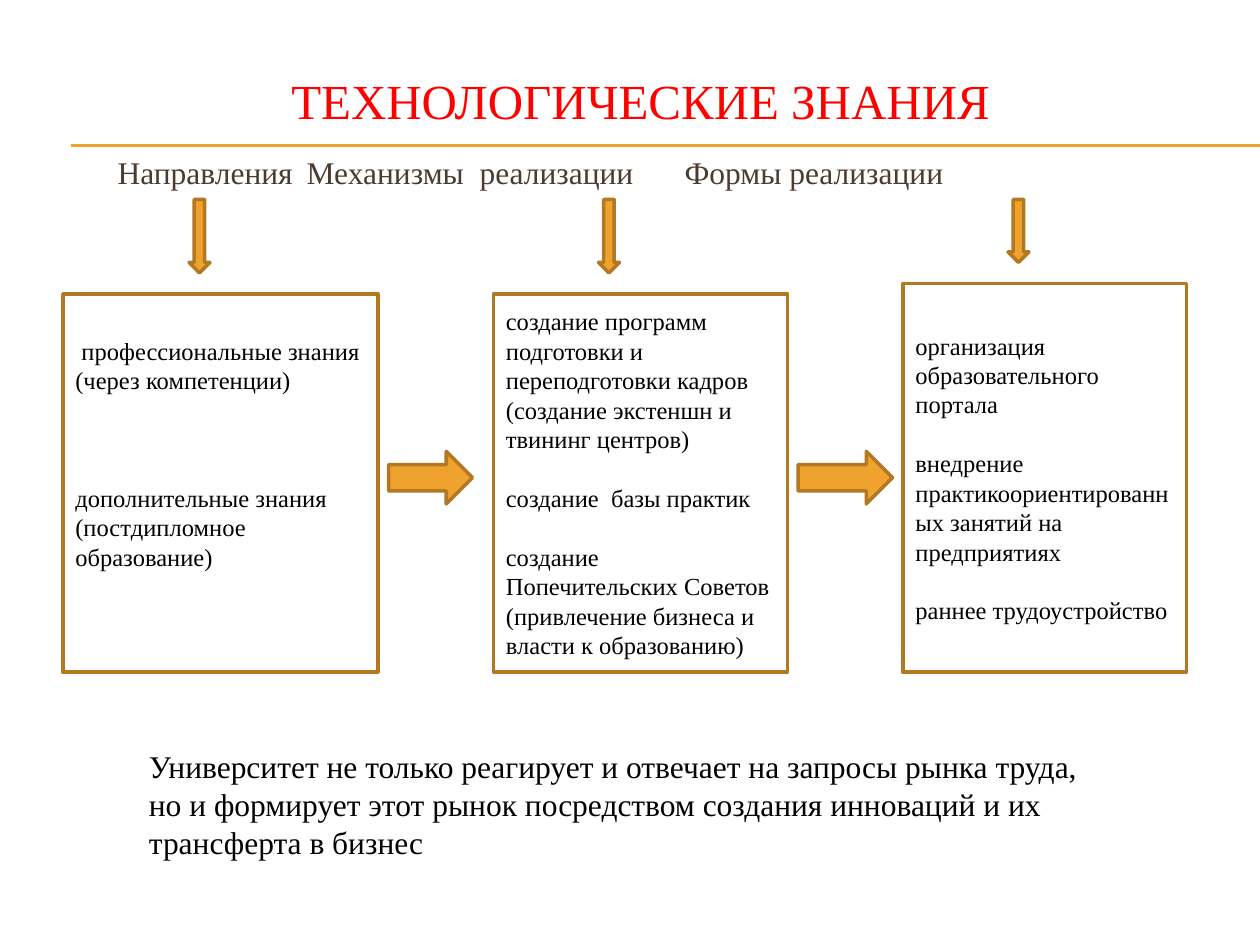
from lxml import etree
from pptx import Presentation
from pptx.dml.color import RGBColor
from pptx.enum.shapes import MSO_CONNECTOR, MSO_SHAPE
from pptx.enum.text import MSO_ANCHOR, MSO_AUTO_SIZE, PP_ALIGN
from pptx.oxml.ns import qn
from pptx.util import Pt

RECT, DOWN, RIGHT = MSO_SHAPE.RECTANGLE, MSO_SHAPE.DOWN_ARROW, MSO_SHAPE.RIGHT_ARROW
LINE = MSO_CONNECTOR.STRAIGHT
MID, TOP = MSO_ANCHOR.MIDDLE, MSO_ANCHOR.TOP
LEFT, CENTER = PP_ALIGN.LEFT, PP_ALIGN.CENTER
NO_FIT, GROW = MSO_AUTO_SIZE.NONE, MSO_AUTO_SIZE.SHAPE_TO_FIT_TEXT

FONT = "Times New Roman"
GOLD, EDGE, RED, BROWN, BLACK = "F0A22E", "B27822", "FF0000", "4E3B30", "000000"
ROW = 16.8  # height of one 14 pt line

# Content
TITLE = "ТЕХНОЛОГИЧЕСКИЕ ЗНАНИЯ"
HEADS = [("Направления", 45), ("Механизмы  реализации", 189),
         ("Формы реализации", 445.5)]  # text, tab stop
# Each box: left, top, width, arrow offset, arrow height, rows left free below,
# paragraphs as (rows left free above, text)
BOXES = [
    (36, 168, 180, 72, 42, 2, [
        (0, " профессиональные знания"),
        (0, "(через компетенции)"),
        (3, "дополнительные знания (постдипломное образование)")]),
    (282, 168, 168, 60, 42, 0, [
        (0, "создание программ подготовки и переподготовки кадров"),
        (0, "(создание экстеншн и твининг центров)"),
        (1, "создание  базы практик"),
        (1, "создание"),
        (0, "Попечительских Советов"),
        (0, "(привлечение бизнеса и власти к образованию)")]),
    (516, 162, 162, 60, 36, 0, [
        (0, "организация образовательного портала"),
        (1, "внедрение практикоориентированных занятий на предприятиях"),
        (1, "раннее трудоустройство")]),
]
BASE = 384  # shared bottom of the boxes
STEPS = [(222, 48), (456, 54)]  # left, width of the arrows between boxes
NOTE = ("Университет не только реагирует и отвечает на запросы рынка труда, "
        "но и формирует этот рынок посредством создания инноваций и их "
        "трансферта в бизнес")


def rgb(code):
    return RGBColor.from_string(code)


def place(shape, x, y, w, h):
    shape.left, shape.top, shape.width, shape.height = Pt(x), Pt(y), Pt(w), Pt(h)


def frame(shape, anchor, fit=NO_FIT):
    text = shape.text_frame
    text.word_wrap = True
    text.auto_size = fit
    text.vertical_anchor = anchor
    return text


def write(para, words, size, color, align=LEFT):
    para.alignment = align
    run = para.add_run()
    run.text = words
    run.font.name, run.font.size = FONT, Pt(size)
    run.font.color.rgb = rgb(color)


def block(kind, x, y, w, h, fill=None):
    shape = slide.shapes.add_shape(kind, Pt(x), Pt(y), Pt(w), Pt(h))
    shape.shadow.inherit = False
    if fill:
        shape.fill.solid()
        shape.fill.fore_color.rgb = rgb(fill)
    else:
        shape.fill.background()
    shape.line.color.rgb = rgb(EDGE)
    shape.line.width = Pt(2)
    return shape


deck = Presentation()
deck.slide_width, deck.slide_height = Pt(720), Pt(540)
slide = deck.slides.add_slide(deck.slide_layouts[1])
title, body = slide.placeholders

# Double rule under the title
for y in (82.8, 83.5):
    rule = slide.shapes.add_connector(LINE, Pt(40.5), Pt(y), Pt(720), Pt(y))
    rule.line.color.rgb = rgb(GOLD)
    rule.line.width = Pt(0.75)
    etree.SubElement(rule._element.spPr, qn("a:effectLst"))

# Title
place(title, 24, 36, 684, 42)
write(frame(title, MID).paragraphs[0], TITLE, 28, RED, CENTER)

# Column heads on tab stops
place(body, 24, 84, 684, 468)
para = frame(body, TOP).paragraphs[0]
write(para, "".join("\t" + head for head, _ in HEADS), 18, BROWN)
props = para._p.get_or_add_pPr()
props.set("marL", "0")
props.set("indent", "0")
etree.SubElement(props, qn("a:buNone"))
tabs = etree.SubElement(props, qn("a:tabLst"))
for _, stop in HEADS:
    etree.SubElement(tabs, qn("a:tab"), pos=str(Pt(stop)), algn="l")

# Boxes, each with its down arrow
for x, y, w, shift, tall, free, items in BOXES:
    text = frame(block(RECT, x, y, w, BASE - y), MID)
    text.margin_bottom = Pt(3.6 + free * ROW)
    for i, (gap, words) in enumerate(items):
        para = text.add_paragraph() if i else text.paragraphs[0]
        para.space_before = Pt(gap * ROW)
        write(para, words, 14, BLACK)
    block(DOWN, x + shift, 114, 12, tall, GOLD)

# Arrows between boxes
for x, w in STEPS:
    block(RIGHT, x, 258, w, 30, GOLD)

# Closing note
note = slide.shapes.add_textbox(Pt(78), Pt(423.5), Pt(558), Pt(72.7))
write(frame(note, TOP, GROW).paragraphs[0], NOTE, 18, BLACK)

deck.save("out.pptx")
